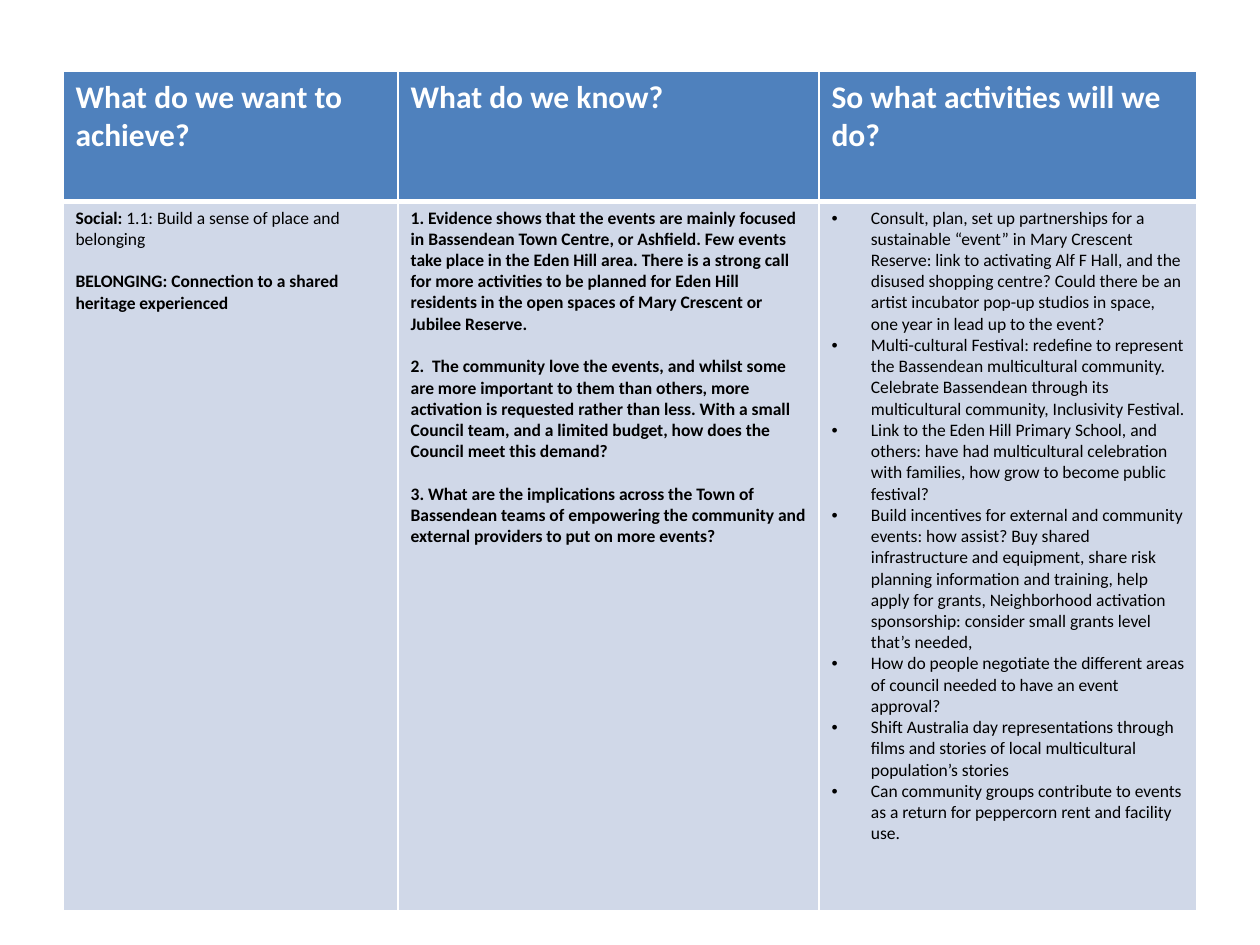
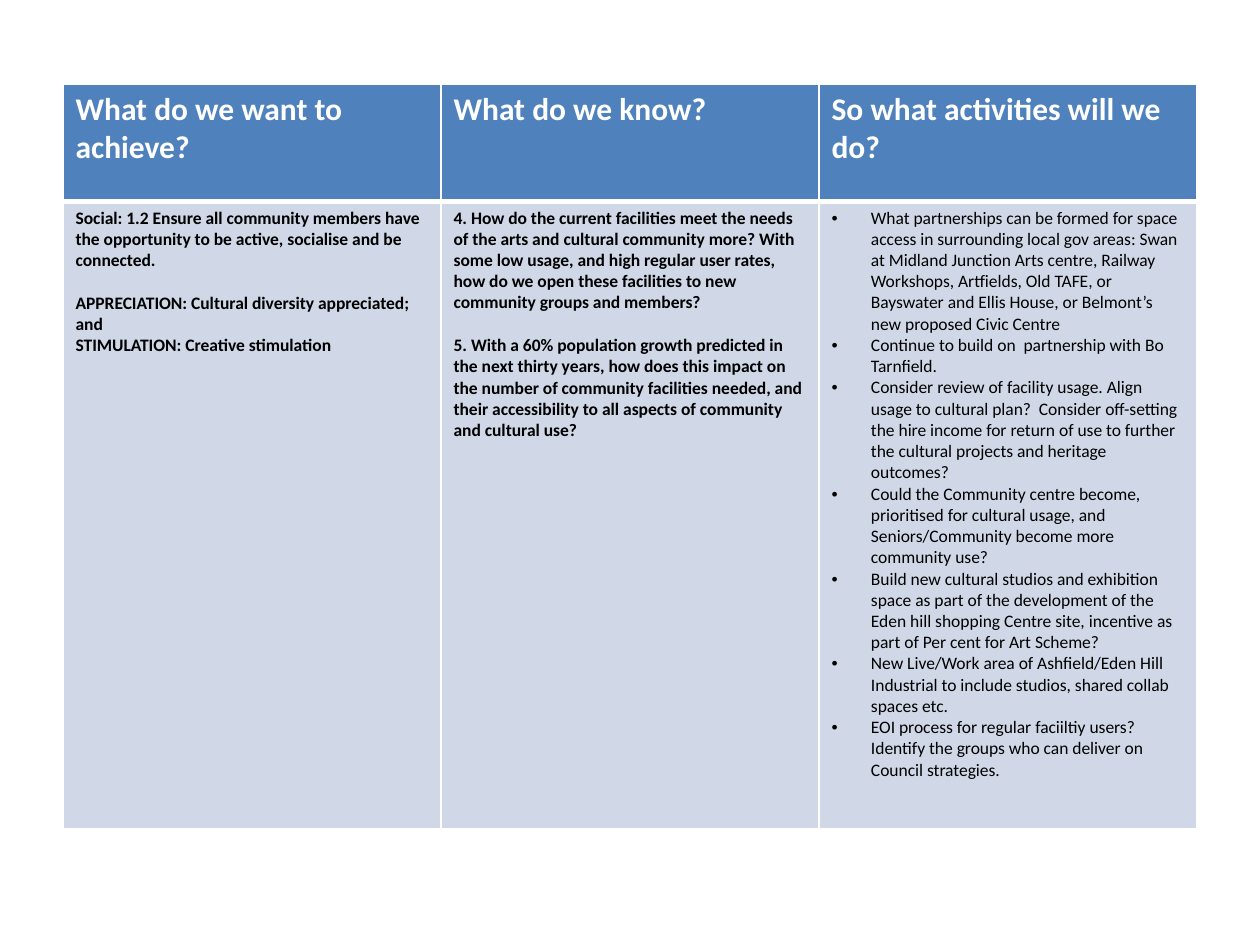
from dataclasses import dataclass

from lxml import etree
from pptx import Presentation
from pptx.dml.color import RGBColor
from pptx.oxml import ns
from pptx.util import Pt


@dataclass(frozen=True)
class Theme:
    font: str = "Calibri"
    header_size: int = 18
    body_size: int = 10
    paragraph_gap: float = 12.2
    bullet_indent: float = 22.5
    thin_line: int = 1
    thick_line: int = 3
    white: str = "FFFFFF"
    black: str = "000000"
    header_fill: str = "4F81BD"
    body_fill: str = "D0D8E8"


THEME = Theme()
TABLE_LEFT, TABLE_WIDTH = 36, 648
HEADERS = ["What do we want to achieve?", "What do we know?", "So what activities will we do?"]

# Goals and findings are (gap before, bold text, plain text); activities are bullets.
PAGES = [
    {
        "top": 41,
        "columns": [191.5, 240.5, 216],
        "rows": [74, 405.5],
        "goals": [
            (False, "Social: ", "1.1: Build a sense of place and belonging"),
            (True, "BELONGING: Connection to a shared heritage experienced", ""),
        ],
        "findings": [
            (False, "1. Evidence shows that the events are mainly focused in Bassendean Town Centre, "
             "or Ashfield. Few events take place in the Eden Hill area. There is a strong call for "
             "more activities to be planned for Eden Hill residents in the open spaces of Mary "
             "Crescent or Jubilee Reserve.", ""),
            (True, "2.  The community love the events, and whilst some are more important to them "
             "than others, more activation is requested rather than less. With a small Council team, "
             "and a limited budget, how does the Council meet this demand?", ""),
            (True, "3. What are the implications across the Town of Bassendean teams of empowering "
             "the community and external providers to put on more events?", ""),
        ],
        "activities": [
            "Consult, plan, set up partnerships for a sustainable “event” in Mary Crescent Reserve: "
            "link to activating Alf F Hall, and the disused shopping centre? Could there be an artist "
            "incubator pop-up studios in space, one year in lead up to the event?",
            "Multi-cultural Festival: redefine to represent the Bassendean multicultural community. "
            "Celebrate Bassendean through its multicultural community, Inclusivity Festival.",
            "Link to the Eden Hill Primary School, and others: have had multicultural celebration "
            "with families, how grow to become public festival?",
            "Build incentives for external and community events: how assist? Buy shared "
            "infrastructure and equipment, share risk planning information and training, help apply "
            "for grants, Neighborhood activation sponsorship: consider small grants level that’s "
            "needed,",
            "How do people negotiate the different areas of council needed to have an event approval?",
            "Shift Australia day representations through films and stories of local multicultural "
            "population’s stories",
            "Can community groups contribute to events as a return for peppercorn rent and facility "
            "use.",
        ],
    },
    {
        "top": 48,
        "columns": [216, 216, 216],
        "rows": [67, 358.5],
        "goals": [
            (False, "Social: 1.2 Ensure all community members have the opportunity to be active, "
             "socialise and be connected.", ""),
            (True, "APPRECIATION: Cultural diversity appreciated; and", ""),
            (False, "STIMULATION: Creative stimulation", ""),
        ],
        "findings": [
            (False, "4. How do the current facilities meet the needs of the arts and cultural "
             "community more? With some low usage, and high regular user rates, how do we open these "
             "facilities to new community groups and members?", ""),
            (True, "5. With a 60% population growth predicted in the next thirty years, how does "
             "this impact on the number of community facilities needed, and their accessibility to "
             "all aspects of community and cultural use?", ""),
        ],
        "activities": [
            "What partnerships can be formed for space access in surrounding local gov areas: Swan at "
            "Midland Junction Arts centre, Railway Workshops, Artfields, Old TAFE, or Bayswater and "
            "Ellis House, or Belmont’s new proposed Civic Centre",
            "Continue to build on  partnership with Bo Tarnfield.",
            "Consider review of facility usage. Align usage to cultural plan?  Consider off-setting "
            "the hire income for return of use to further the cultural projects and heritage outcomes?",
            "Could the Community centre become, prioritised for cultural usage, and "
            "Seniors/Community become more community use?",
            "Build new cultural studios and exhibition space as part of the development of the Eden "
            "hill shopping Centre site, incentive as part of Per cent for Art Scheme?",
            "New Live/Work area of Ashfield/Eden Hill Industrial to include studios, shared collab "
            "spaces etc.",
            "EOI process for regular faciiltiy users?  Identify the groups who can deliver on Council "
            "strategies.",
        ],
    },
]


def style_cell(cell, fill, top, bottom):
    """Give the cell white borders and a solid fill."""
    properties = cell._tc.get_or_add_tcPr()
    for side, width in {"L": THEME.thin_line, "R": THEME.thin_line, "T": top, "B": bottom}.items():
        line = etree.SubElement(properties, ns.qn(f"a:ln{side}"), w=str(Pt(width)))
        solid = etree.SubElement(line, ns.qn("a:solidFill"))
        etree.SubElement(solid, ns.qn("a:srgbClr"), val=THEME.white)
    cell.fill.solid()
    cell.fill.fore_color.rgb = RGBColor.from_string(fill)


def fill_cell(cell, paragraphs, size, color, bulleted=False):
    for index, (gap, bold_text, plain_text) in enumerate(paragraphs):
        frame = cell.text_frame
        para = frame.add_paragraph() if index else frame.paragraphs[0]
        if gap:
            para.space_before = Pt(THEME.paragraph_gap)
        if bulleted:
            indent = Pt(THEME.bullet_indent)
            properties = para._p.get_or_add_pPr()
            properties.set("marL", str(indent))
            properties.set("indent", str(-indent))
            etree.SubElement(properties, ns.qn("a:buFont"), typeface="Arial")
            etree.SubElement(properties, ns.qn("a:buChar"), char="•")
        for words, bold in ((bold_text, True), (plain_text, False)):
            if words:
                span = para.add_run()
                span.text = words
                span.font.name = THEME.font
                span.font.size = Pt(size)
                span.font.bold = bold
                span.font.color.rgb = RGBColor.from_string(color)


deck = Presentation()
deck.slide_width, deck.slide_height = Pt(720), Pt(540)
blank_layout = deck.slide_layouts[6]

for content in PAGES:
    page = deck.slides.add_slide(blank_layout)
    table = page.shapes.add_table(
        2, 3, Pt(TABLE_LEFT), Pt(content["top"]), Pt(TABLE_WIDTH), Pt(sum(content["rows"]))
    ).table
    for row, height in zip(table.rows, content["rows"]):
        row.height = Pt(height)
    for column, width in zip(table.columns, content["columns"]):
        column.width = Pt(width)

    activities = [(False, "", activity) for activity in content["activities"]]
    bodies = [content["goals"], content["findings"], activities]
    for index, (header, body) in enumerate(zip(HEADERS, bodies)):
        header_cell, body_cell = table.cell(0, index), table.cell(1, index)
        style_cell(header_cell, THEME.header_fill, THEME.thin_line, THEME.thick_line)
        fill_cell(header_cell, [(False, header, "")], THEME.header_size, THEME.white)
        style_cell(body_cell, THEME.body_fill, THEME.thick_line, THEME.thin_line)
        fill_cell(body_cell, body, THEME.body_size, THEME.black, bulleted=body is activities)

deck.save("out.pptx")
